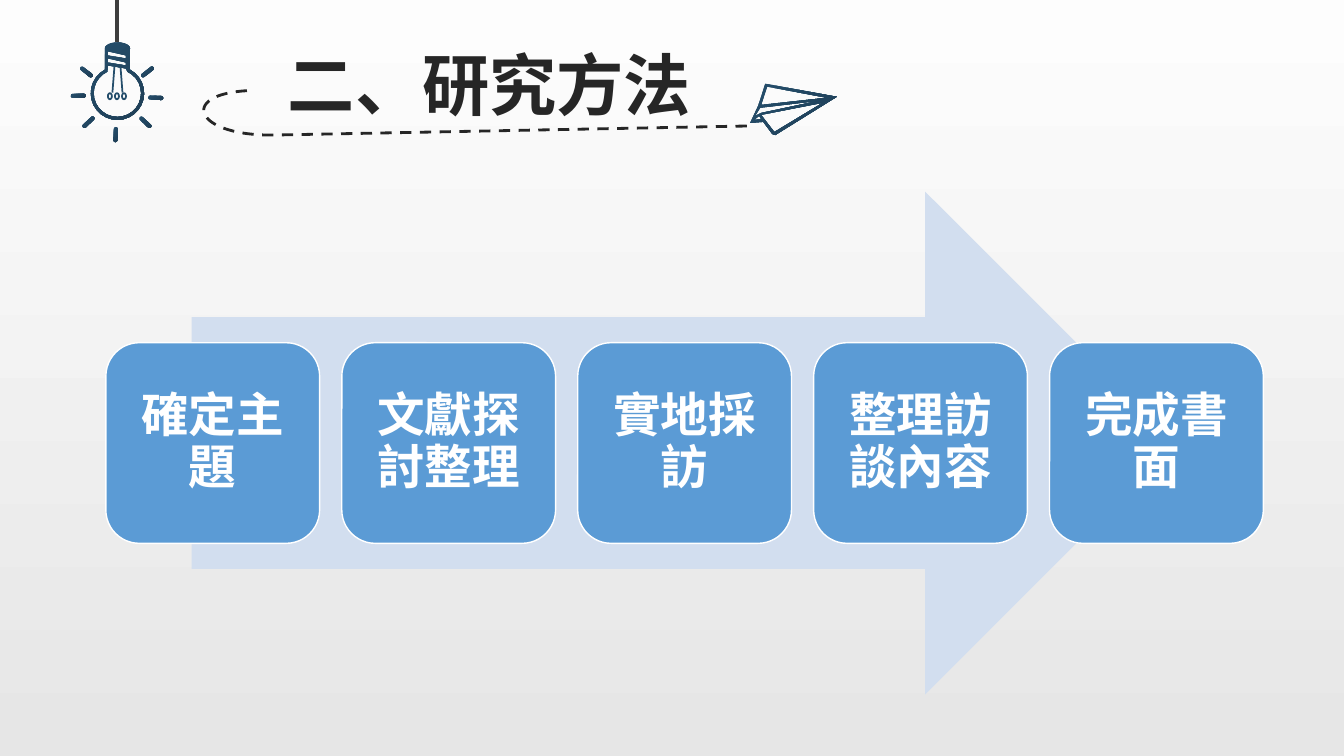
import math

from lxml import etree
from pptx import Presentation
from pptx import util as u
from pptx.dml.color import RGBColor
from pptx.enum import dml, shapes, text
from pptx.oxml import ns

FONT = "Noto Sans CJK SC"
INK = RGBColor(0x26, 0x26, 0x26)
CORD = RGBColor(0x3D, 0x3D, 0x3D)
NAVY = RGBColor(0x25, 0x4E, 0x6B)
DEEP_NAVY = RGBColor(0x1F, 0x3F, 0x57)
GLASS = RGBColor(0xFB, 0xFB, 0xFB)
PALE_BLUE = RGBColor(0xD2, 0xDE, 0xEF)
BLUE = RGBColor(0x5B, 0x9B, 0xD5)
WHITE = RGBColor(0xFF, 0xFF, 0xFF)
BACK_TOP = RGBColor(0xFD, 0xFD, 0xFD)
BACK_BOTTOM = RGBColor(0xE6, 0xE6, 0xE6)

STEPS = ["確定主題", "文獻探討整理", "實地採訪", "整理訪談內容", "完成書面"]
BULB = (1.165, 0.925)
RAY_ANGLES = [-38, 3, 43, 92, 137, 180, 218]
PLANE = [
    [(8.3, 0.96), (7.69, 1.34), (7.66, 1.33), (7.57, 1.21), (7.44, 1.22), (7.52, 1.05),
     (7.59, 0.83)],
    [(7.61, 0.86), (7.55, 1.04), (8.2, 0.97)],
    [(7.55, 1.14), (7.68, 1.31), (8.16, 1.02)],
    [(7.54, 1.07), (7.49, 1.15), (7.55, 1.12), (8.12, 1)],
    [(7.48, 1.19), (7.55, 1.18), (7.53, 1.15)]]
TRAIL_BEND = [(2.45, 0.9), (1.77, 0.94), (1.93, 1.35), (2.71, 1.34)]
TRAIL_END = (7.43, 1.25)


def arc(center, radius, first, last, pieces=24, stretch=1):
    """Points along an arc; angles in degrees, clockwise from the right."""
    turns = [math.radians(first + (last - first) * i / pieces) for i in range(pieces + 1)]
    return [(center[0] + radius * math.cos(turn),
             center[1] + radius * stretch * math.sin(turn)) for turn in turns]


def bezier(controls, pieces=40):
    points = []
    for t in (i / pieces for i in range(pieces + 1)):
        weights = [math.comb(3, k) * t**k * (1 - t)**(3 - k) for k in range(4)]
        points.append(tuple(sum(w * c[axis] for w, c in zip(weights, controls))
                            for axis in (0, 1)))
    return points


def ray(angle):
    """A short bar with round ends, pointing away from the bulb."""
    near, far = (arc((1.16, 0.95), radius, angle, angle, 1)[0] for radius in (0.33, 0.44))
    return (arc(far, 0.02, angle - 90, angle + 90, 8)
            + arc(near, 0.02, angle + 90, angle + 270, 8))


def write_text(frame, content, size=34, color=WHITE, spacing=None):
    frame.word_wrap = True
    paragraph = frame.paragraphs[0]
    paragraph.alignment = text.PP_ALIGN.CENTER
    paragraph.line_spacing = spacing
    run = paragraph.add_run()
    run.text = content
    run.font.size, run.font.bold, run.font.name = u.Pt(size), True, FONT
    run.font.color.rgb = color
    latin = run._r.get_or_add_rPr().find(ns.qn("a:latin"))
    latin.addnext(etree.Element(ns.qn("a:ea"), typeface=FONT))


class MethodSlide:
    def __init__(self, presentation):
        self.slide = presentation.slides.add_slide(presentation.slide_layouts[6])
        self.shapes = self.slide.shapes

    def gradient(self, fill, first, last, angle):
        fill.gradient()
        fill.gradient_angle = angle
        for stop, color, position in zip(fill.gradient_stops, (first, last), (0, 1)):
            stop.color.rgb, stop.position = color, position

    def cord(self, start, end):
        line = self.shapes.add_connector(shapes.MSO_CONNECTOR.STRAIGHT,
                                         *map(u.Inches, start + end))
        line.line.color.rgb, line.line.width = CORD, u.Pt(2.25)
        etree.SubElement(line._element.spPr, ns.qn("a:effectLst"))

    def outline(self, contours, close=True):
        paths = [[(u.Inches(x), u.Inches(y)) for x, y in points] for points in contours]
        builder = self.shapes.build_freeform(*paths[0][0])
        for number, points in enumerate(paths):
            if number:
                builder.move_to(*points[0])
            builder.add_line_segments(points[1:], close=close)
        shape = builder.convert_to_shape()
        shape.shadow.inherit = False
        return shape

    def drawing(self, contours, fill=None):
        shape = self.outline(contours)
        shape.line.fill.background()
        if fill:
            shape.fill.solid()
            shape.fill.fore_color.rgb = fill
        else:
            self.gradient(shape.fill, NAVY, DEEP_NAVY, 315)

    def stroke(self, contours, color, width, dash=None):
        shape = self.outline(contours, close=False)
        shape.fill.background()
        shape.line.color.rgb, shape.line.width = color, u.Pt(width)
        shape.line.dash_style = dash

    def title(self, content, box):
        frame = self.shapes.add_textbox(*map(u.Inches, box)).text_frame
        write_text(frame, content, size=48, color=INK)
        frame.auto_size = text.MSO_AUTO_SIZE.SHAPE_TO_FIT_TEXT

    def block(self, kind, box, fill, line=None):
        shape = self.shapes.add_shape(kind, *map(u.Inches, box))
        shape.shadow.inherit = False
        shape.fill.solid()
        shape.fill.fore_color.rgb = fill
        if line:
            shape.line.color.rgb, shape.line.width = line, u.Pt(1)
        else:
            shape.line.fill.background()
        return shape

    def step(self, content, box):
        frame = self.block(shapes.MSO_SHAPE.ROUNDED_RECTANGLE, box, BLUE, WHITE).text_frame
        frame.margin_left = frame.margin_right = u.Inches(0.14)
        frame.margin_top = frame.margin_bottom = u.Inches(0.14)
        frame.vertical_anchor = text.MSO_ANCHOR.MIDDLE
        write_text(frame, content, spacing=0.9)


def main():
    presentation = Presentation()
    presentation.slide_width, presentation.slide_height = u.Inches(13.33), u.Inches(7.5)
    page = MethodSlide(presentation)
    page.gradient(page.slide.background.fill, BACK_TOP, BACK_BOTTOM, 270)

    # Hanging light bulb: edge, screw thread, glass, filament, rays
    page.cord((1.16, 0), (1.16, 0.42))
    edge = arc(BULB, 0.265, -62, 242) + arc((1.165, 0.48), 0.125, 180, 360, 12, stretch=0.48)
    threads = [[(1.07, y), (1.25, y + 0.04), (1.25, y + 0.07), (1.07, y + 0.04)]
               for y in (0.51, 0.58)]
    glass = arc(BULB, 0.235, -65, 245) + [(1.07, 0.65), (1.25, 0.68)]
    page.drawing([edge], fill=GLASS)
    page.drawing([edge, *threads, glass])
    wires = [[(1.165 + side * 0.03, 0.66), (1.165 + side * 0.05, 0.92)] for side in (-1, 1)]
    loops = [arc((1.16 + shift, 0.955), 0.02, 0, 360, 12, stretch=1.5)
             for shift in (-0.07, 0, 0.07)]
    page.stroke(wires + loops, NAVY, 1.25)
    for angle in RAY_ANGLES:
        page.drawing([ray(angle)])

    # Title with paper plane and its trail
    page.title("二、研究方法", (2.22, 0.38, 5.27, 0.91))
    page.drawing(PLANE)
    page.stroke([bezier(TRAIL_BEND) + [TRAIL_END]], INK, 2, dml.MSO_LINE.DASH)

    # Process arrow and steps
    page.block(shapes.MSO_SHAPE.RIGHT_ARROW, (1.9, 1.9, 9.77, 4.99), PALE_BLUE)
    for number, content in enumerate(STEPS):
        page.step(content, (1.05 + 2.34 * number, 3.4, 2.12, 1.99))

    presentation.save("out.pptx")


if __name__ == "__main__":
    main()
